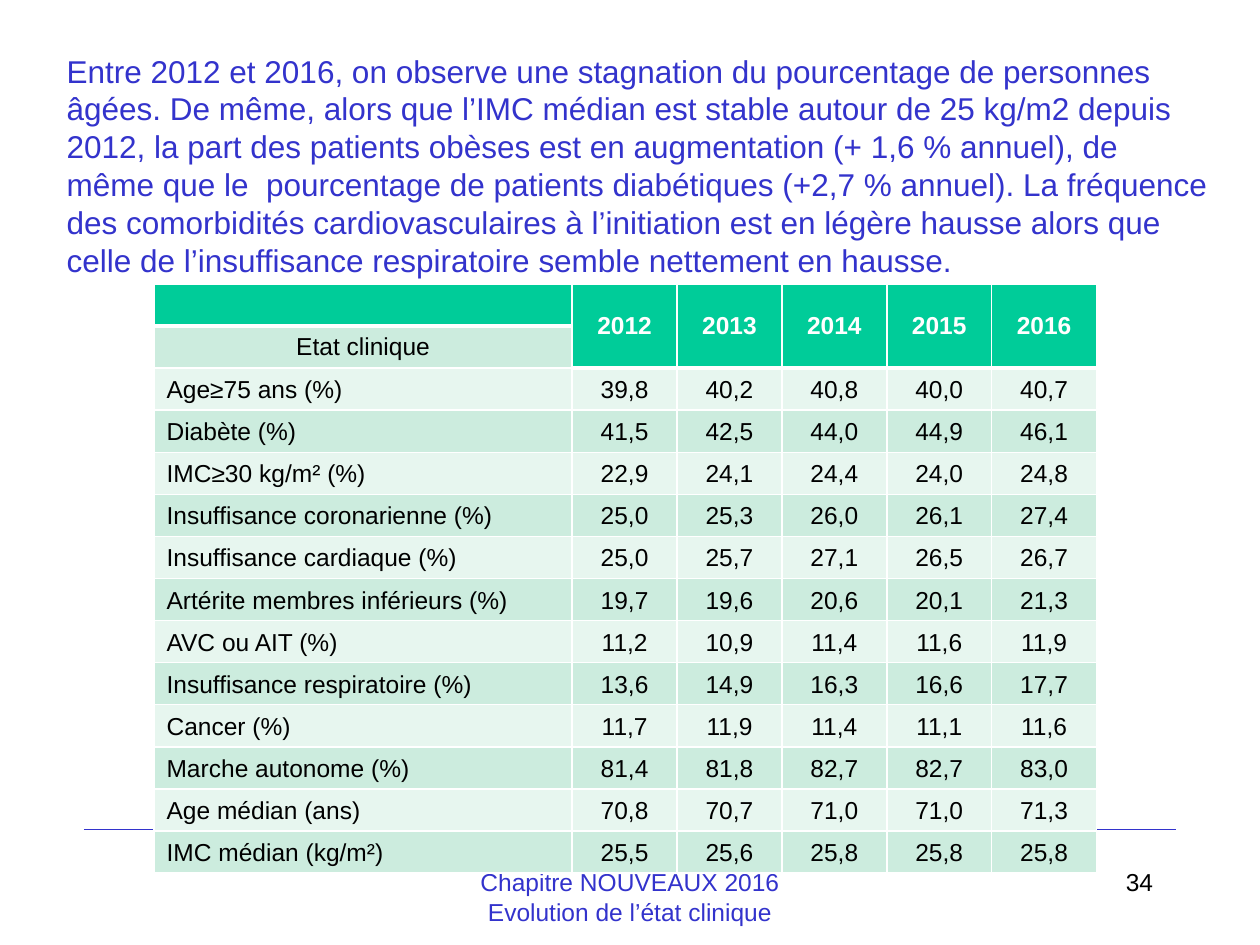
from lxml.etree import SubElement
from pptx import Presentation
from pptx.dml.color import RGBColor as Color
from pptx.enum.shapes import MSO_CONNECTOR as Connector
from pptx.enum.text import MSO_ANCHOR as Anchor, PP_ALIGN as Align
from pptx.oxml.ns import qn
from pptx.util import Pt

# Content
INTRO = (
    "Entre 2012 et 2016, on observe une stagnation du pourcentage de personnes âgées. "
    "De même, alors que l’IMC médian est stable autour de 25 kg/m2 depuis 2012, "
    "la part des patients obèses est en augmentation (+ 1,6 % annuel), "
    "de même que le  pourcentage de patients diabétiques (+2,7 % annuel). "
    "La fréquence des comorbidités cardiovasculaires à l’initiation est en légère hausse "
    "alors que celle de l’insuffisance respiratoire semble nettement en hausse."
)
FOOTER = ["Chapitre NOUVEAUX 2016", "Evolution de l’état clinique"]
PAGE_NUMBER = "34"
YEARS = ["2012", "2013", "2014", "2015", "2016"]
SECTION = "Etat clinique"
ROWS = [
    ("Age≥75 ans (%)", "39,8", "40,2", "40,8", "40,0", "40,7"),
    ("Diabète (%)", "41,5", "42,5", "44,0", "44,9", "46,1"),
    ("IMC≥30 kg/m² (%)", "22,9", "24,1", "24,4", "24,0", "24,8"),
    ("Insuffisance coronarienne (%)", "25,0", "25,3", "26,0", "26,1", "27,4"),
    ("Insuffisance cardiaque (%)", "25,0", "25,7", "27,1", "26,5", "26,7"),
    ("Artérite membres inférieurs (%)", "19,7", "19,6", "20,6", "20,1", "21,3"),
    ("AVC ou AIT (%)", "11,2", "10,9", "11,4", "11,6", "11,9"),
    ("Insuffisance respiratoire (%)", "13,6", "14,9", "16,3", "16,6", "17,7"),
    ("Cancer (%)", "11,7", "11,9", "11,4", "11,1", "11,6"),
    ("Marche autonome (%)", "81,4", "81,8", "82,7", "82,7", "83,0"),
    ("Age médian (ans)", "70,8", "70,7", "71,0", "71,0", "71,3"),
    ("IMC médian (kg/m²)", "25,5", "25,6", "25,8", "25,8", "25,8"),
]

THEME = {
    "font": "Arial", "intro": 18, "small": 14,
    "blue": "3333CC", "black": "000000", "white": "FFFFFF",
    "header": "00CC99", "bands": ("CCECDE", "E7F6EF"),
}
LABEL_WIDTH, YEAR_WIDTH, ROW_HEIGHT = 239, 59.95, 24


def color(name):
    return Color.from_string(THEME.get(name, name))


def write(para, text, size, ink, align=Align.LEFT, bold=False):
    para.alignment = align
    span = para.add_run()
    span.text = text
    span.font.name = THEME["font"]
    span.font.size = Pt(THEME[size])
    span.font.bold = bold
    span.font.color.rgb = color(ink)


def add_text(page, place, lines, size, ink, align=Align.LEFT):
    box = page.shapes.add_textbox(*map(Pt, place))
    frame = box.text_frame
    frame.word_wrap = True
    for index, line in enumerate(lines):
        para = frame.add_paragraph() if index else frame.paragraphs[0]
        write(para, line, size, ink, align)


def style_cell(cell, fill, bottom=1):
    """Draw the white borders, then the fill, of one cell."""
    properties = cell._tc.get_or_add_tcPr()
    for side, width in (("L", 1), ("R", 1), ("T", 1), ("B", bottom)):
        line = SubElement(properties, qn(f"a:ln{side}"), w=str(Pt(width)))
        paint = SubElement(line, qn("a:solidFill"))
        SubElement(paint, qn("a:srgbClr"), val=THEME["white"])
    cell.fill.solid()
    cell.fill.fore_color.rgb = color(fill)


def fill_cell(cell, text, anchor, ink="black", align=Align.CENTER, bold=False):
    cell.vertical_anchor = anchor
    write(cell.text_frame.paragraphs[0], text, "small", ink, align, bold)


def shrink_empty(cell):
    """Keep an empty cell from stretching its row."""
    para = cell.text_frame.paragraphs[0]
    SubElement(para._p, qn("a:endParaRPr"), sz=str(THEME["small"] * 100))


def add_results(page):
    columns, count = len(YEARS) + 1, len(ROWS) + 2
    width = LABEL_WIDTH + YEAR_WIDTH * len(YEARS)
    table = page.shapes.add_table(
        count, columns, Pt(88), Pt(162.3), Pt(width), Pt(ROW_HEIGHT * count)).table
    for index, column in enumerate(table.columns):
        column.width = Pt(YEAR_WIDTH if index else LABEL_WIDTH)
    for row in table.rows:
        row.height = Pt(ROW_HEIGHT)

    # Header: the years span two rows, the section name sits under the blank corner
    style_cell(table.cell(0, 0), "header", bottom=3)
    shrink_empty(table.cell(0, 0))
    style_cell(table.cell(1, 0), THEME["bands"][0])
    fill_cell(table.cell(1, 0), SECTION, Anchor.MIDDLE)
    for index, year in enumerate(YEARS, 1):
        top, below = table.cell(0, index), table.cell(1, index)
        top.merge(below)
        for cell in (top, below):
            style_cell(cell, "header", bottom=3)
        shrink_empty(below)
        fill_cell(top, year, Anchor.MIDDLE, "white", bold=True)

    # Banded body
    for r, values in enumerate(ROWS, 2):
        for c, value in enumerate(values):
            cell = table.cell(r, c)
            style_cell(cell, THEME["bands"][(r - 1) % 2])
            fill_cell(cell, value, Anchor.BOTTOM,
                      align=Align.CENTER if c else Align.LEFT)


def add_rule(page):
    rule = page.shapes.add_connector(
        Connector.STRAIGHT, Pt(48), Pt(474), Pt(672), Pt(474))
    rule.line.color.rgb = color("blue")
    rule.line.width = Pt(1)
    SubElement(rule._element.spPr, qn("a:effectLst"))


def main():
    deck = Presentation()
    deck.slide_width, deck.slide_height = Pt(720), Pt(540)
    page = deck.slides.add_slide(deck.slide_layouts[6])
    add_rule(page)
    add_text(page, (516, 492, 150, 36), [PAGE_NUMBER], "small", "black", Align.RIGHT)
    add_text(page, (31, 26, 669, 138), [INTRO], "intro", "blue")
    add_text(page, (246, 492, 228, 36), FOOTER, "small", "blue", Align.CENTER)
    add_results(page)
    deck.save("out.pptx")


if __name__ == "__main__":
    main()
